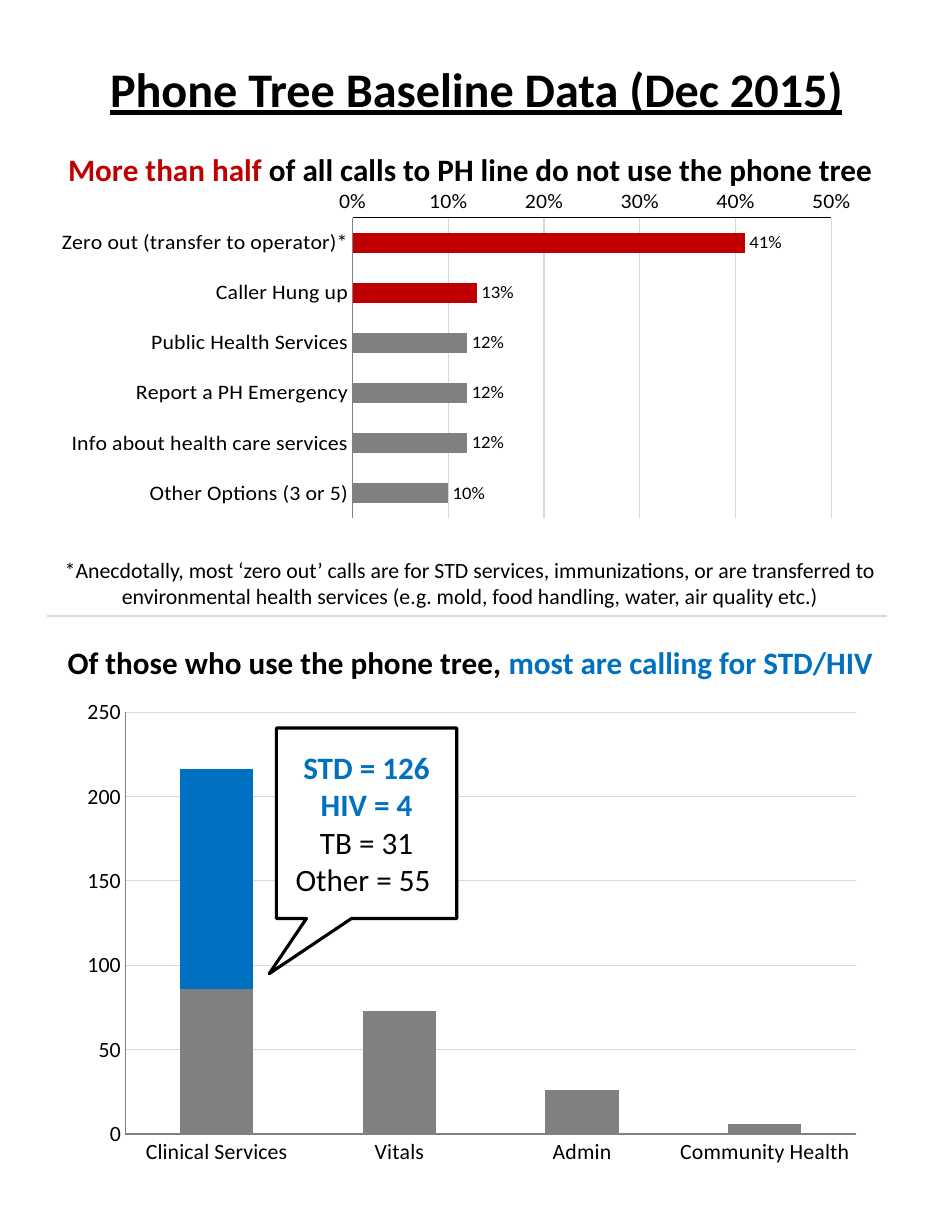
"""Build a one-page report on phone tree use with two bar charts."""
from dataclasses import dataclass, field

from lxml.etree import SubElement
from pptx import Presentation
from pptx.chart.chart import Chart
from pptx.chart.data import CategoryChartData
from pptx.dml.color import RGBColor
from pptx.enum.chart import (XL_AXIS_CROSSES as Crosses, XL_CHART_TYPE as ChartType,
                             XL_LABEL_POSITION as LabelPos, XL_TICK_MARK as Tick)
from pptx.enum.shapes import MSO_CONNECTOR as Conn, MSO_SHAPE as Shape
from pptx.enum.text import MSO_ANCHOR as Anchor, PP_ALIGN as Align
from pptx.oxml import parse_xml
from pptx.oxml.ns import nsdecls, qn
from pptx.util import Cm, Pt

BLACK, GREY, RED, BLUE, PALE = "000000", "808080", "C00000", "0070C0", "D9D9D9"
FONT = "Calibri"
Box = tuple[float, float, float, float]


@dataclass
class Run:
    text: str
    size: float
    color: str = BLACK
    bold: bool = False
    underline: bool = False


@dataclass
class TextBlock:
    box: Box
    paragraphs: list[list[Run]]


@dataclass
class Series:
    values: list
    color: str
    points: dict[int, str] = field(default_factory=dict)


@dataclass
class ChartBlock:
    box: Box
    kind: ChartType
    plot: Box
    categories: list[str]
    series: list[Series]
    size: float
    number_format: str = "General"


def rgb(value: str) -> RGBColor:
    return RGBColor.from_string(value)


def assign(obj, formats: dict) -> None:
    for name, value in formats.items():
        setattr(obj, name, value)


def paint(fill, color: str) -> None:
    fill.solid()
    fill.fore_color.rgb = rgb(color)


def stroke(line, color: str, width: float) -> None:
    line.color.rgb = rgb(color)
    line.width = Pt(width)


def place(sp, box: Box) -> None:
    assign(sp, dict(zip(("left", "top", "width", "height"), map(Cm, box))))


def write(tf, paragraphs: list[list[Run]], anchor: Anchor = Anchor.TOP) -> None:
    assign(tf, {"word_wrap": True, "vertical_anchor": anchor,
                "margin_left": Cm(0.28), "margin_right": Cm(0.28),
                "margin_top": Cm(0.15), "margin_bottom": Cm(0.15)})
    for i, runs in enumerate(paragraphs):
        p = tf.add_paragraph() if i else tf.paragraphs[0]
        p.alignment = Align.CENTER
        for run in runs:
            r = p.add_run()
            r.text = run.text
            assign(r.font, {"name": FONT, "size": Pt(run.size), "bold": run.bold,
                            "underline": run.underline})
            r.font.color.rgb = rgb(run.color)


def add_text(s, block: TextBlock) -> None:
    write(s.shapes.add_textbox(*map(Cm, block.box)).text_frame, block.paragraphs)


def set_plot(chart: Chart, plot: Box) -> None:
    area = chart._chartSpace.find(".//" + qn("c:plotArea"))
    for old in area.findall(qn("c:layout")):
        area.remove(old)
    sizes = "".join(f'<c:{k} val="{v}"/>' for k, v in zip("xywh", plot))
    area.insert(0, parse_xml(
        f'<c:layout {nsdecls("c")}><c:manualLayout><c:layoutTarget val="inner"/>'
        f'<c:xMode val="edge"/><c:yMode val="edge"/>{sizes}</c:manualLayout></c:layout>'))


def add_chart(s, block: ChartBlock) -> Chart:
    data = CategoryChartData()
    data.categories = block.categories
    for i, item in enumerate(block.series, 1):
        data.add_series(f"Series {i}", item.values)
    chart = s.shapes.add_chart(block.kind, *map(Cm, block.box), data).chart
    assign(chart, {"has_legend": False, "has_title": False})
    assign(chart.font, {"name": FONT, "size": Pt(block.size)})
    chart.font.color.rgb = rgb(BLACK)
    set_plot(chart, block.plot)

    plot = chart.plots[0]
    assign(plot, {"gap_width": 150, "vary_by_categories": False})
    for ser, item in zip(plot.series, block.series):
        ser.invert_if_negative = False
        paint(ser.format.fill, item.color)
        for i, color in item.points.items():
            paint(ser.points[i].format.fill, color)

    for axis in (chart.category_axis, chart.value_axis):
        assign(axis, {"major_tick_mark": Tick.NONE, "minor_tick_mark": Tick.NONE})
        axis.tick_labels.font.size = Pt(14)
        stroke(axis.format.line, GREY, 0.75)
    chart.category_axis.has_major_gridlines = False
    chart.value_axis.has_major_gridlines = True
    stroke(chart.value_axis.major_gridlines.format.line, PALE, 0.75)
    assign(chart.value_axis.tick_labels, {"number_format": block.number_format,
                                          "number_format_is_linked": False})
    return chart


def add_callout(s, block: TextBlock) -> None:
    sp = s.shapes.add_shape(Shape.RECTANGULAR_CALLOUT, *map(Cm, block.box))
    sp.shadow.inherit = False
    sp.adjustments[0], sp.adjustments[1] = -0.54, 0.79
    paint(sp.fill, "FFFFFF")
    stroke(sp.line, BLACK, 2)
    write(sp.text_frame, block.paragraphs, Anchor.MIDDLE)


def add_divider(s, left: float, right: float, y: float) -> None:
    line = s.shapes.add_connector(Conn.STRAIGHT, Cm(left), Cm(y), Cm(right), Cm(y))
    stroke(line.line, PALE, 0.75)
    SubElement(line._element.spPr, qn("a:effectLst"))


CALLS = ChartBlock(
    (1.07, 4.27, 18.72, 8.43), ChartType.BAR_CLUSTERED, (0.37, 0.02, 0.58, 0.86),
    ["Zero out (transfer to operator)*", "Caller Hung up", "Public Health Services",
     "Report a PH Emergency", "Info about health care services", "Other Options (3 or 5)"],
    [Series([0.41, 0.13, 0.12, 0.12, 0.12, 0.1], GREY, {0: RED, 1: RED})], 12, "0%")
SERVICES = ChartBlock(
    (1.57, 15.6, 18.21, 11), ChartType.COLUMN_STACKED, (0.07, 0.05, 0.91, 0.87),
    ["Clinical Services", "Vitals", "Admin", "Community Health"],
    [Series([86, 73, 26, 6], GREY), Series([130, None, None, None], BLUE)], 10)
TEXTS = [
    TextBlock((0.71, 3.25, 19.91, 2.01), [[
        Run("More than half ", 20, RED, True),
        Run("of all calls to PH line do not use the phone tree", 20, bold=True)]]),
    TextBlock((0.71, 14.45, 19.91, 1.14), [[
        Run("Of those who use the phone tree, ", 20, bold=True),
        Run("most are calling for STD/HIV", 20, BLUE, True)]]),
    TextBlock((0.71, 12.47, 19.91, 2.34), [[
        Run("*Anecdotally, most ‘zero out’ calls are for STD services, immunizations, "
            "or are transferred to environmental health services "
            "(e.g. mold, food handling, water, air quality etc.)", 14)]]),
]
CLINICAL = TextBlock((6.27, 16.51, 4.09, 4.32), [
    [Run("STD = 126", 20, BLUE, True)], [Run("HIV = 4", 20, BLUE, True)],
    [Run("TB = 31", 20)], [Run("Other = 55 ", 20)]])


def main() -> None:
    prs = Presentation()
    assign(prs, {"slide_width": Cm(21.59), "slide_height": Cm(27.94)})
    s = prs.slides.add_slide(prs.slide_layouts[0])
    subtitle = s.placeholders[1]._element
    subtitle.getparent().remove(subtitle)
    place(s.shapes.title, (1.63, 0.61, 18.34, 2.79))
    write(s.shapes.title.text_frame,
          [[Run("Phone Tree Baseline Data (Dec 2015)", 31, BLACK, True, True)]], Anchor.MIDDLE)

    services = add_chart(s, SERVICES)
    services.plots[0].overlap = 100
    assign(services.value_axis, {"minimum_scale": 0, "maximum_scale": 250, "major_unit": 50})

    calls = add_chart(s, CALLS)
    assign(calls.category_axis, {"reverse_order": True, "crosses": Crosses.MAXIMUM})
    assign(calls.value_axis, {"minimum_scale": 0, "maximum_scale": 0.5, "major_unit": 0.1})
    stroke(calls.value_axis.format.line, BLACK, 0.75)
    calls.plots[0].has_data_labels = True
    assign(calls.plots[0].data_labels, {
        "show_value": True, "number_format": "0%", "number_format_is_linked": False,
        "position": LabelPos.OUTSIDE_END})

    for block in TEXTS:
        add_text(s, block)
    add_callout(s, CLINICAL)
    add_divider(s, 1.07, 20.12, 13.97)
    prs.save("out.pptx")


if __name__ == "__main__":
    main()
